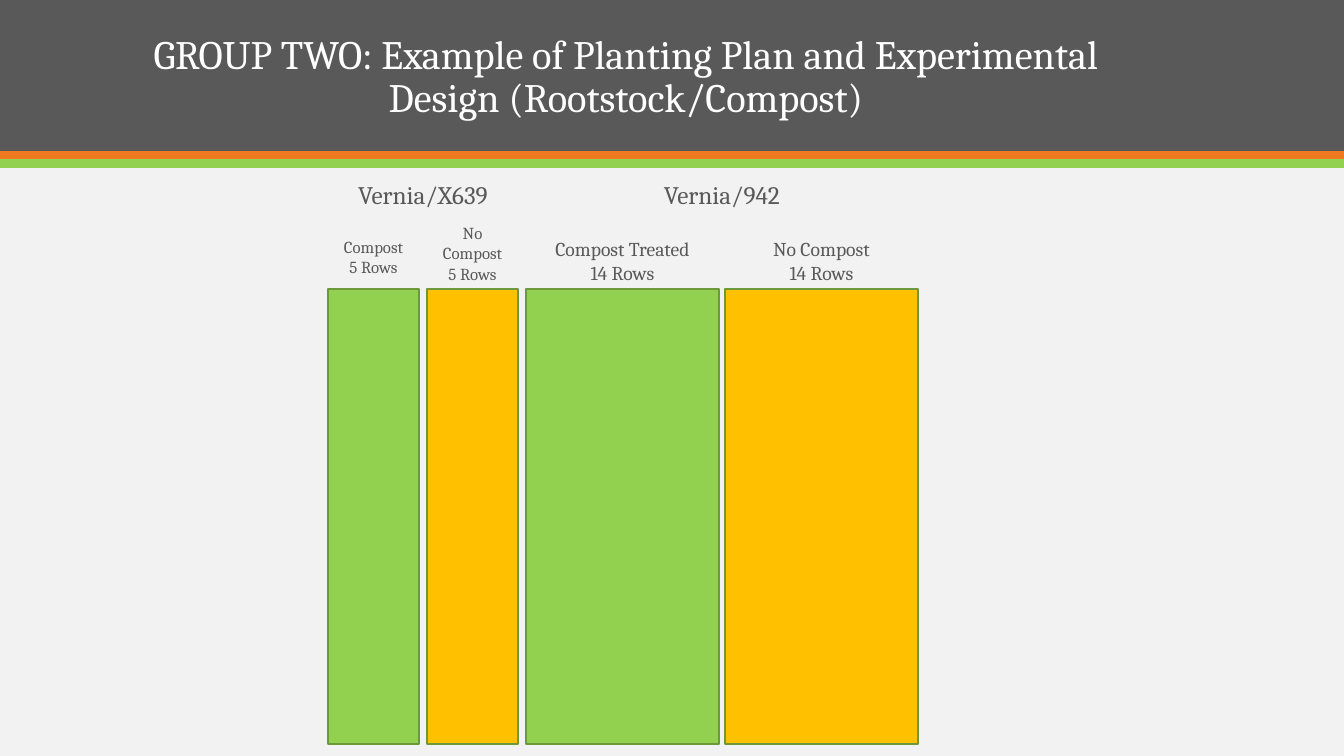
from dataclasses import dataclass

from pptx import Presentation
from pptx.dml.color import RGBColor
from pptx.enum.shapes import MSO_SHAPE
from pptx.enum.text import MSO_ANCHOR, PP_ALIGN
from pptx.slide import Slide
from pptx.util import Emu, Pt

RECT = MSO_SHAPE.RECTANGLE
CENTER = PP_ALIGN.CENTER
TOP = MSO_ANCHOR.TOP
MIDDLE = MSO_ANCHOR.MIDDLE

FONT = "Cambria"
GRAY = "595959"
GREEN = "92D050"
ORANGE = "EF7920"
AMBER = "FFC000"
OUTLINE = "6C9A3B"
WHITE = "FFFFFF"
BACKGROUND = "F2F2F2"

SLIDE_W, SLIDE_H = 1344, 756
PLOT_TOP, PLOT_H = 289, 455
HEADING_TOP, HEADING_H = 174, 40


@dataclass(frozen=True)
class Band:
    top: int
    height: int
    color: str


@dataclass(frozen=True)
class Plot:
    left: int
    width: int
    color: str
    label: str
    label_top: int
    label_height: int
    size: float


@dataclass(frozen=True)
class Heading:
    text: str
    left: int
    width: int


BANDS = [Band(0, 151, GRAY), Band(151, 9, ORANGE), Band(159, 9, GREEN)]
PLOTS = [
    Plot(328, 91, GREEN, "Compost\n5 Rows", 232, 50, 12),
    Plot(427, 91, AMBER, "No Compost\n5 Rows", 218, 71, 12),
    Plot(526, 193, GREEN, "Compost Treated\n14 Rows", 232, 57, 14),
    Plot(725, 193, AMBER, "No Compost\n14 Rows", 232, 57, 14),
]
HEADINGS = [Heading("Vernia/X639", 328, 190), Heading("Vernia/942", 526, 392)]
TITLE = (
    "GROUP TWO: Example of Planting Plan and Experimental\n"
    "Design (Rootstock/Compost)"
)


def px(n: int) -> Emu:
    return Emu(round(n * 914400 / 100.8))


def rgb(color: str) -> RGBColor:
    return RGBColor.from_string(color)


def add_rect(s: Slide, left: int, top: int, width: int, height: int,
             fill: str, line: str | None = None) -> None:
    sp = s.shapes.add_shape(RECT, px(left), px(top), px(width), px(height))
    sp.shadow.inherit = False
    sp.fill.solid()
    sp.fill.fore_color.rgb = rgb(fill)
    if line:
        sp.line.color.rgb = rgb(line)
        sp.line.width = Pt(1)
    else:
        sp.line.fill.background()


def add_text(s: Slide, text: str, left: int, top: int, width: int, height: int,
             size: float, color: str = GRAY, anchor: MSO_ANCHOR = TOP,
             spacing: float = 1.0) -> None:
    sp = s.shapes.add_textbox(px(left), px(top), px(width), px(height))
    tf = sp.text_frame
    tf.word_wrap = True
    tf.vertical_anchor = anchor
    tf.text = text
    for p in tf.paragraphs:
        p.alignment = CENTER
        p.line_spacing = spacing
        for r in p.runs:
            r.font.name = FONT
            r.font.size = Pt(size)
            r.font.color.rgb = rgb(color)


def main() -> None:
    prs = Presentation()
    prs.slide_width, prs.slide_height = px(SLIDE_W), px(SLIDE_H)
    s = prs.slides.add_slide(prs.slide_layouts[6])
    s.background.fill.solid()
    s.background.fill.fore_color.rgb = rgb(BACKGROUND)

    for band in BANDS:
        add_rect(s, 0, band.top, SLIDE_W, band.height, band.color)
    add_text(s, TITLE, 106, 22, 1040, 112, 28.8, WHITE, MIDDLE, 0.9)

    for plot in PLOTS:
        add_rect(s, plot.left, PLOT_TOP, plot.width, PLOT_H, plot.color, OUTLINE)
        add_text(s, plot.label, plot.left, plot.label_top, plot.width,
                 plot.label_height, plot.size)
    for heading in HEADINGS:
        add_text(s, heading.text, heading.left, HEADING_TOP, heading.width,
                 HEADING_H, 18)

    prs.save("out.pptx")


if __name__ == "__main__":
    main()
